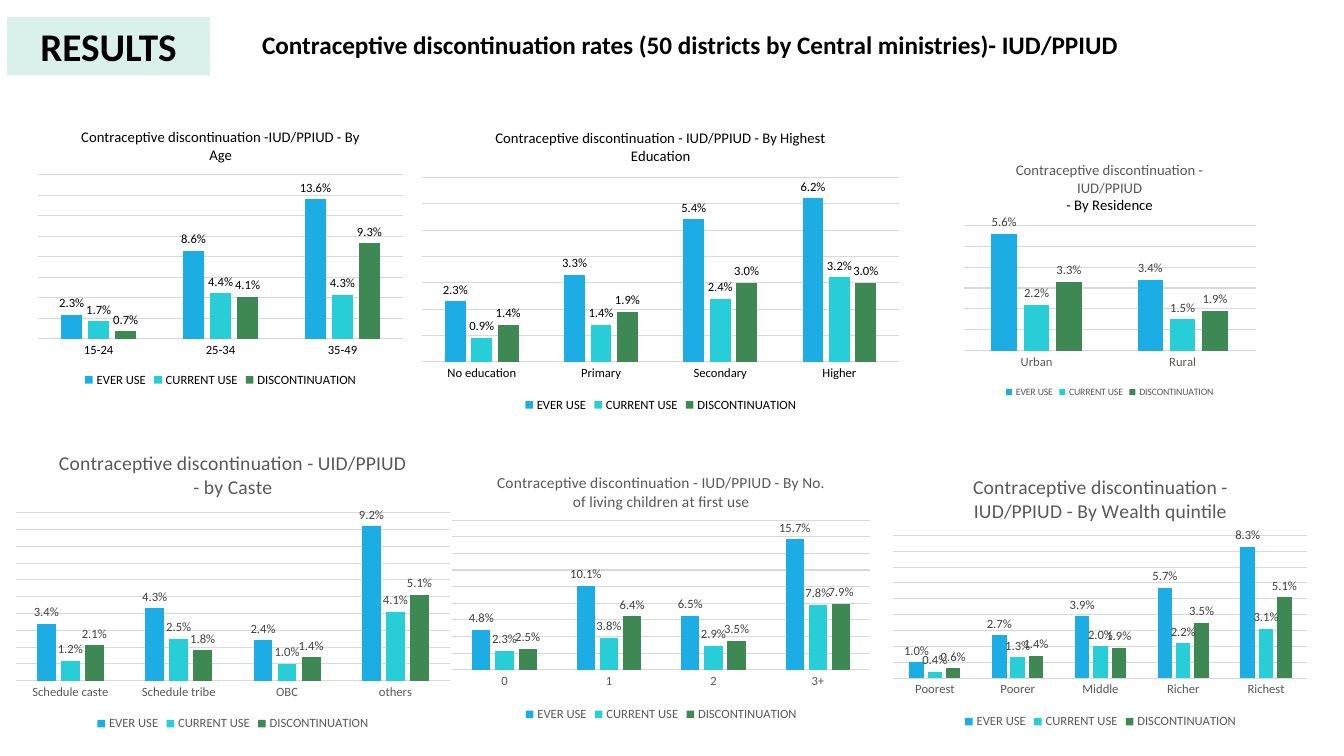
"""Build a results slide with six column charts of IUD/PPIUD discontinuation."""
from lxml import etree
from pptx import Presentation
from pptx import util as u
from pptx.chart.data import CategoryChartData
from pptx.dml.color import RGBColor
from pptx.enum import chart as ch, shapes, text

COLOURS = {"black": "000000", "grey": "595959", "label": "404040", "rule": "D9D9D9", "mint": "D9F1EA"}
FONT = "Calibri"
SERIES = [("EVER USE", "1CADE4"), ("CURRENT USE", "27CED7"), ("DISCONTINUATION", "3E8853")]
HEADING = "Contraceptive discontinuation rates (50 districts by Central ministries)- IUD/PPIUD"
TAG_AT = (0.18, 0.43, 5.11, 1.47)
HEADING_AT = (6.35, 0.61, 22.86, 1.02)
PLOT_LEFT, PLOT_WIDTH = 0.02, 0.96

CHARTS = [
    dict(title=[("Contraceptive discontinuation -IUD/PPIUD - By Age", "black")],
         title_size=10.5, legend_size=9, ink="black", label="black",
         at=(0.76, 2.87, 9.6, 6.99), plot=(0.22, 0.59), top=0.16, step=0.02,
         cats=["15-24", "25-34", "35-49"],
         values=[(0.023, 0.086, 0.136), (0.017, 0.044, 0.043), (0.007, 0.041, 0.093)]),
    dict(title=[("Contraceptive discontinuation - IUD/PPIUD - By No. of living children at first use", "grey")],
         title_size=11, legend_size=9, ink="grey", label="label",
         at=(11.18, 11.56, 10.97, 6.73), plot=(0.23, 0.56), top=0.18, step=0.02,
         cats=["0", "1", "2", "3+"],
         values=[(0.048, 0.101, 0.065, 0.157), (0.023, 0.038, 0.029, 0.078), (0.025, 0.064, 0.035, 0.079)]),
    dict(title=[("Contraceptive discontinuation - IUD/PPIUD - By Wealth quintile", "grey")],
         title_size=14, legend_size=9, ink="grey", label="label",
         at=(22.3, 11.56, 10.87, 6.91), plot=(0.28, 0.52), top=0.09, step=0.01,
         cats=["Poorest", "Poorer", "Middle", "Richer", "Richest"],
         values=[(0.01, 0.027, 0.039, 0.057, 0.083), (0.004, 0.013, 0.02, 0.022, 0.031),
                 (0.006, 0.014, 0.019, 0.035, 0.051)]),
    dict(title=[("Contraceptive discontinuation - UID/PPIUD - by Caste", "grey")],
         title_size=14, legend_size=9, ink="grey", label="label",
         at=(0.18, 10.95, 11.38, 7.57), plot=(0.26, 0.56), top=0.1, step=0.01,
         cats=["Schedule caste", "Schedule tribe", "OBC", "others"],
         values=[(0.034, 0.043, 0.024, 0.092), (0.012, 0.025, 0.01, 0.041), (0.021, 0.018, 0.014, 0.051)]),
    dict(title=[("Contraceptive discontinuation - IUD/PPIUD", "grey"), ("- By Residence", "black")],
         title_size=10.5, legend_size=7, ink="grey", label="label",
         at=(24.13, 3.68, 7.67, 6.45), plot=(0.31, 0.49), top=0.06, step=0.01,
         cats=["Urban", "Rural"],
         values=[(0.056, 0.034), (0.022, 0.015), (0.033, 0.019)]),
    dict(title=[("Contraceptive discontinuation - IUD/PPIUD - By Highest Education", "black")],
         title_size=10.5, legend_size=9, ink="black", label="black",
         at=(10.39, 2.87, 12.52, 7.62), plot=(0.21, 0.61), top=0.07, step=0.01,
         cats=["No education", "Primary", "Secondary", "Higher"],
         values=[(0.023, 0.033, 0.054, 0.062), (0.009, 0.014, 0.024, 0.032), (0.014, 0.019, 0.03, 0.03)]),
]


def rgb(name):
    return RGBColor.from_string(COLOURS.get(name, name))


def cm(lengths):
    return [u.Cm(length) for length in lengths]


def style(font, size, colour, bold=False):
    font.name, font.size, font.bold = FONT, u.Pt(size), bold
    font.color.rgb = rgb(colour)


def rule(line):
    line.color.rgb = rgb("rule")
    line.width = u.Pt(0.75)


def place_plot(chart, top, height):
    area = chart.plots[0]._element.getparent()
    ns = etree.QName(area).namespace
    for old in area.findall(f"{{{ns}}}layout"):
        area.remove(old)
    layout = etree.Element(f"{{{ns}}}layout")
    manual = etree.SubElement(layout, f"{{{ns}}}manualLayout")
    settings = [("layoutTarget", "inner"), ("xMode", "edge"), ("yMode", "edge"),
                ("x", PLOT_LEFT), ("y", top), ("w", PLOT_WIDTH), ("h", height)]
    for tag, value in settings:
        etree.SubElement(manual, f"{{{ns}}}{tag}").set("val", str(value))
    area.insert(0, layout)


def add_columns(page, info):
    data = CategoryChartData(number_format="0.0%")
    data.categories = info["cats"]
    for (name, _), values in zip(SERIES, info["values"]):
        data.add_series(name, values)
    chart = page.shapes.add_chart(ch.XL_CHART_TYPE.COLUMN_CLUSTERED, *cm(info["at"]), data).chart
    style(chart.font, 9, info["ink"])

    chart.has_title = True
    frame = chart.chart_title.text_frame
    for index, (words, colour) in enumerate(info["title"]):
        para = frame.add_paragraph() if index else frame.paragraphs[0]
        para.text = words
        style(para.font, info["title_size"], colour)
        style(para.runs[0].font, info["title_size"], colour)
    chart.chart_title.include_in_layout = False

    chart.has_legend = True
    chart.legend.position = ch.XL_LEGEND_POSITION.BOTTOM
    chart.legend.include_in_layout = False
    style(chart.legend.font, info["legend_size"], info["ink"])

    cats, scale = chart.category_axis, chart.value_axis
    cats.major_tick_mark = ch.XL_TICK_MARK.NONE
    rule(cats.format.line)
    style(cats.tick_labels.font, 9, info["ink"])
    scale.visible = False
    scale.minimum_scale, scale.maximum_scale, scale.major_unit = 0, info["top"], info["step"]
    rule(scale.major_gridlines.format.line)

    plot = chart.plots[0]
    plot.gap_width, plot.overlap, plot.vary_by_categories = 219, -27, False
    for series, (_, colour) in zip(plot.series, SERIES):
        series.format.fill.solid()
        series.format.fill.fore_color.rgb = rgb(colour)
        labels = series.data_labels
        labels.show_value = True
        labels.position = ch.XL_LABEL_POSITION.OUTSIDE_END
        labels.number_format, labels.number_format_is_linked = "0.0%", False
        style(labels.font, 9, info["label"])
    place_plot(chart, *info["plot"])


def main():
    deck = Presentation()
    deck.slide_width, deck.slide_height = cm((33.87, 19.05))
    page = deck.slides.add_slide(deck.slide_layouts[5])

    tag = page.shapes.add_shape(shapes.MSO_SHAPE.RECTANGLE, *cm(TAG_AT))
    tag.shadow.inherit = False
    tag.fill.solid()
    tag.fill.fore_color.rgb = rgb("mint")
    tag.line.fill.background()
    heading = page.shapes.title
    heading.left, heading.top, heading.width, heading.height = cm(HEADING_AT)
    for box, words, size, align, anchor in [
        (tag, "RESULTS", 28, text.PP_ALIGN.CENTER, text.MSO_ANCHOR.MIDDLE),
        (heading, HEADING, 18, text.PP_ALIGN.LEFT, text.MSO_ANCHOR.TOP),
    ]:
        frame = box.text_frame
        frame.text = words
        frame.word_wrap, frame.vertical_anchor = True, anchor
        frame.auto_size = text.MSO_AUTO_SIZE.NONE
        frame.paragraphs[0].alignment = align
        style(frame.paragraphs[0].font, size, "black", True)

    for info in CHARTS:
        add_columns(page, info)
    deck.save("out.pptx")


if __name__ == "__main__":
    main()
